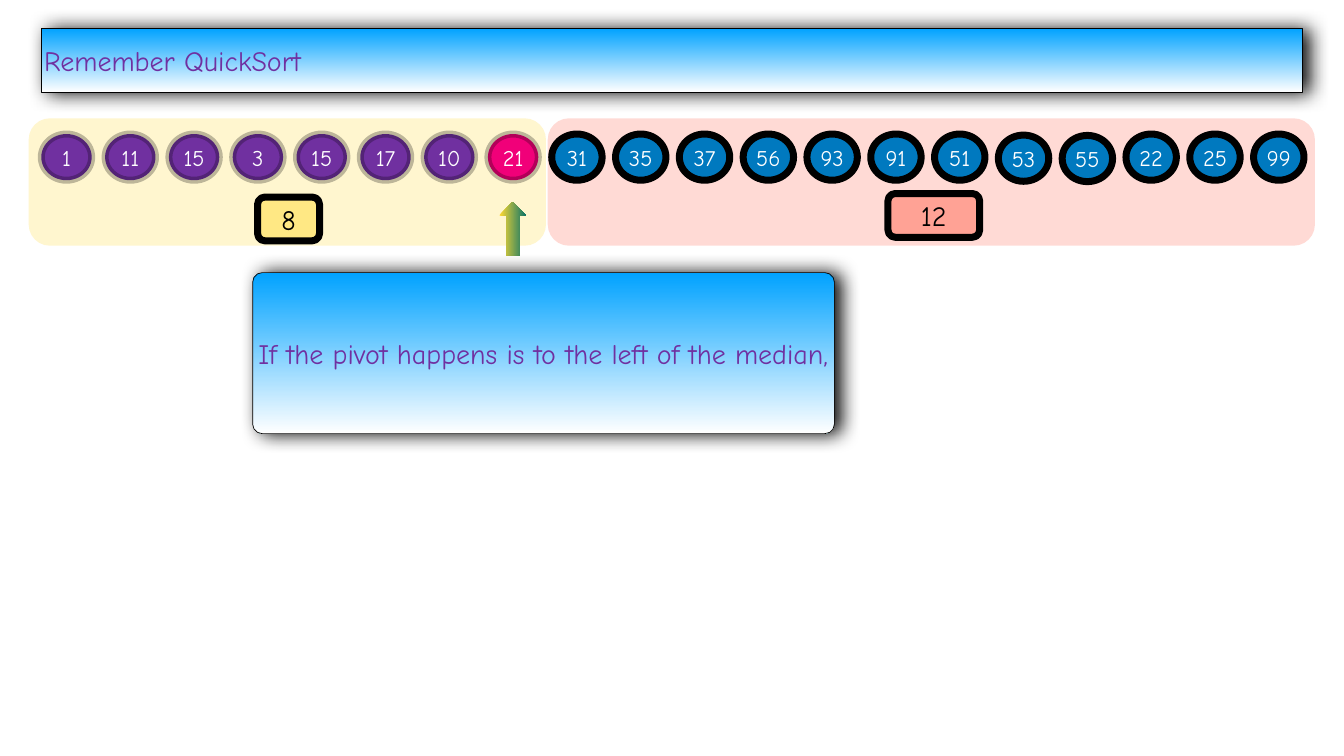
from lxml import etree
from pptx import Presentation
from pptx import util as u
from pptx.dml.color import RGBColor
from pptx.enum import shapes, text
from pptx.oxml import parse_xml
from pptx.oxml.ns import nsdecls, qn

Pt = u.Pt
GEO = shapes.MSO_SHAPE
COLORS = {
    "black": "000000", "white": "FFFFFF", "ink": "7030A0",
    "left": "7030A0", "pivot": "F10079", "right": "0079BF",
    "sky": "00A2FF", "cream": "FFE884", "salmon": "FFA295",
    "gold": "FFD932", "teal": "0B7468",
}
FONT = "Comic Neue"
LEFT = [1, 11, 15, 3, 15, 17, 10]
PIVOT = [21]
RIGHT = [31, 35, 37, 56, 93, 91, 51, 53, 55, 22, 25, 99]
PITCH = 91.15
NUDGE = {53: 1.5, 55: 2}  # these two sit a little lower


def rgb(name):
    return RGBColor.from_string(COLORS[name])


def set_alpha(fill_format, percent):
    """Set the opacity of a solid fill."""
    clr = next(fill_format._xPr.iter(qn("a:srgbClr")))
    etree.SubElement(clr, qn("a:alpha"), val=str(percent * 1000))


def write(sp, content, size=32, color="white", align=text.PP_ALIGN.CENTER):
    tf = sp.text_frame
    tf.margin_left = tf.margin_right = tf.margin_top = tf.margin_bottom = Pt(4)
    tf.vertical_anchor = text.MSO_ANCHOR.MIDDLE
    tf.auto_size = text.MSO_AUTO_SIZE.NONE
    tf.word_wrap = False
    p = tf.paragraphs[0]
    p.alignment = align
    r = p.add_run()
    r.text = str(content)
    r.font.name = FONT
    r.font.size = Pt(size)
    r.font.color.rgb = rgb(color)


class Deck:
    """Holds the style and the current slide."""

    def __init__(self):
        self.prs = Presentation()
        self.prs.slide_width, self.prs.slide_height = Pt(1920), Pt(1080)
        self.slide = self.prs.slides.add_slide(self.prs.slide_layouts[5])

    def shape(self, geo, box, fill, line=None, opacity=None, line_opacity=None):
        sp = self.slide.shapes.add_shape(geo, *map(Pt, box))
        sp.shadow.inherit = False
        sp.fill.solid()
        sp.fill.fore_color.rgb = rgb(fill)
        if opacity:
            set_alpha(sp.fill, opacity)
        if line is None:
            sp.line.fill.background()
        else:
            sp.line.width = Pt(line)
            sp.line.color.rgb = rgb("black")
            if line_opacity:
                set_alpha(sp.line.fill, line_opacity)
        return sp

    def gradient(self, sp, start, end):
        """Fill a shape from its top to its bottom edge."""
        sp.fill.gradient()
        sp.fill.gradient_angle = 270
        for stop, name in zip(sp.fill.gradient_stops, (start, end)):
            stop.color.rgb = rgb(name)

    def banner_style(self, sp, content):
        self.gradient(sp, "sky", "white")
        sp.line.width = Pt(1)
        sp.line.color.rgb = rgb("black")
        sp_pr = sp._element.spPr
        for old in sp_pr.findall(qn("a:effectLst")):
            sp_pr.remove(old)
        sp_pr.append(parse_xml(
            f'<a:effectLst {nsdecls("a")}><a:outerShdw blurRad="{Pt(28)}" '
            f'dist="{Pt(9)}" dir="0" rotWithShape="0"><a:srgbClr val="{COLORS["black"]}">'
            '<a:alpha val="97000"/></a:srgbClr></a:outerShdw></a:effectLst>'))
        write(sp, content, size=40, color="ink", align=text.PP_ALIGN.LEFT)

    def title(self, box, content):
        sp = self.slide.shapes.title
        sp.left, sp.top, sp.width, sp.height = map(Pt, box)
        sp._element.spPr.append(parse_xml(
            f'<a:prstGeom {nsdecls("a")} prst="roundRect"><a:avLst>'
            '<a:gd name="adj" fmla="val 5900"/></a:avLst></a:prstGeom>'))
        self.banner_style(sp, content)

    def banner(self, box, content):
        sp = self.shape(GEO.ROUNDED_RECTANGLE, box, "sky")
        sp.adjustments[0] = 0.059
        self.banner_style(sp, content)

    def panel(self, box, fill):
        self.shape(GEO.ROUNDED_RECTANGLE, box, fill, opacity=39)

    def ball(self, index, value, fill):
        box = (59 + index * PITCH, 191.5 + NUDGE.get(value, 0), 72, 66)
        sp = self.shape(GEO.OVAL, box, fill, line=10,
                        line_opacity=None if fill == "right" else 26)
        write(sp, value)

    def count(self, box, value, fill):
        sp = self.shape(GEO.ROUNDED_RECTANGLE, box, fill, line=10)
        write(sp, value, size=40, color="black")

    def up_arrow(self, box):
        sp = self.shape(GEO.RIGHT_ARROW, box, "gold")
        sp.rotation = 270
        self.gradient(sp, "gold", "teal")


def main():
    deck = Deck()
    deck.title((59, 40, 1802, 92), "Remember QuickSort")
    deck.panel((782.5, 169, 1096, 182), "salmon")
    deck.panel((41, 169, 739, 182), "cream")

    groups = [(LEFT, "left"), (PIVOT, "pivot"), (RIGHT, "right")]
    balls = [(value, fill) for values, fill in groups for value in values]
    for index, (value, fill) in enumerate(balls):
        deck.ball(index, value, fill)

    deck.count((368, 281.5, 88.5, 62.5), len(LEFT + PIVOT), "cream")
    deck.count((1268.5, 276.5, 131, 62.5), len(RIGHT), "salmon")
    deck.up_arrow((694, 308, 77, 38))
    deck.banner((361, 389.5, 831, 230),
                "If the pivot happens is to the left of the median,")
    deck.prs.save("out.pptx")


if __name__ == "__main__":
    main()
